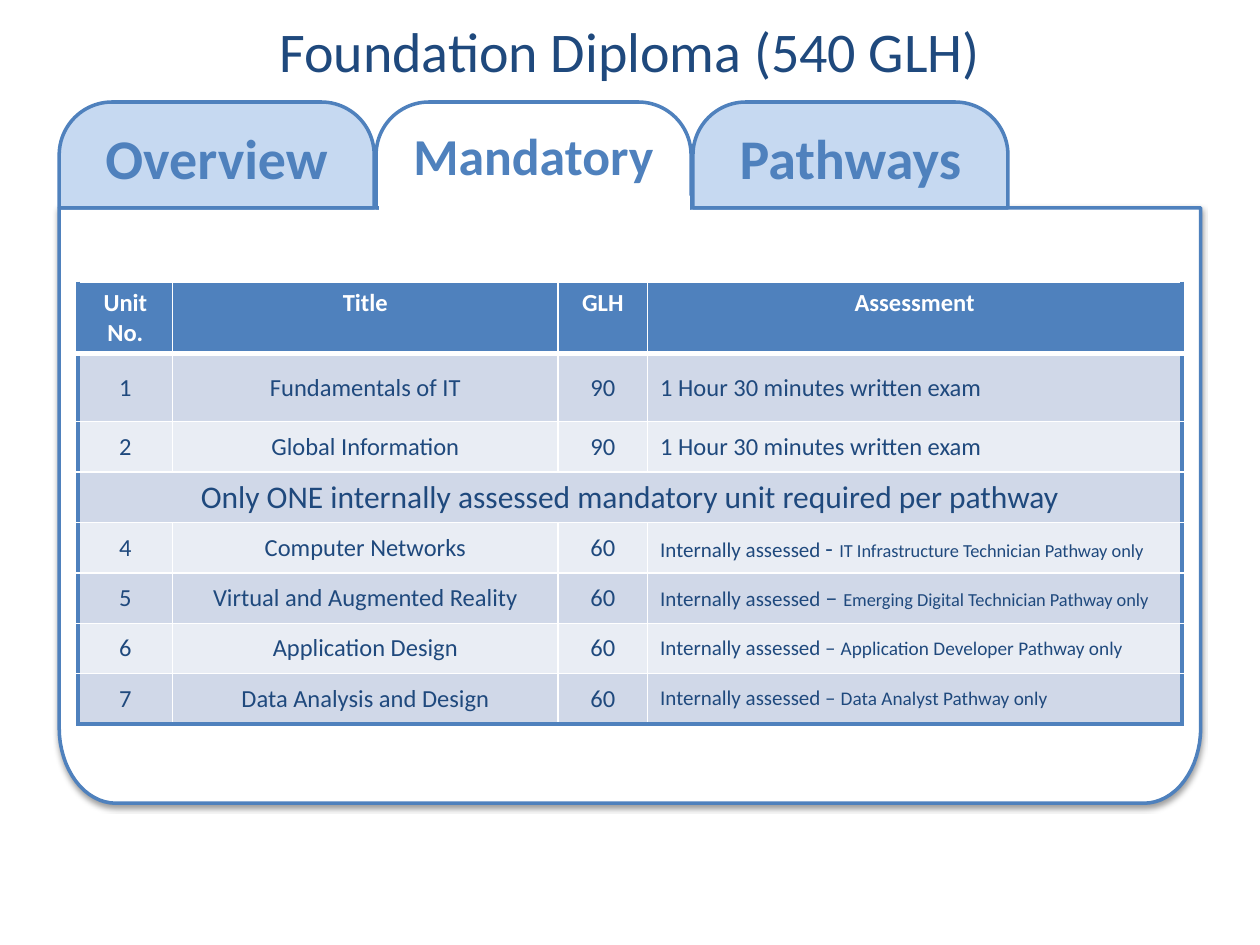
import math
import lxml.etree
import pptx
import pptx.util
import pptx.dml.color
import pptx.enum.shapes
import pptx.enum.text
import pptx.oxml.ns
from dataclasses import dataclass

Pt = pptx.util.Pt
Align = pptx.enum.text.PP_ALIGN
Anchor = pptx.enum.text.MSO_ANCHOR
Kind = pptx.enum.shapes.MSO_SHAPE
WIDE, HIGH = pptx.util.Inches(10), pptx.util.Inches(7.5)


@dataclass(frozen=True)
class Theme:
    face: str = "Calibri"
    dark: str = "1F497D"
    blue: str = "4F81BD"
    pale: str = "C6D9F1"
    white: str = "FFFFFF"
    bands: tuple = ("D0D8E8", "E9EDF4")
    head: float = 32
    front: float = 29.6
    note: float = 18
    body: float = 14
    small: float = 12
    line: float = 2
    edge: float = 2.25
    rule: float = 1
    thick: float = 3


T = Theme()


def across(share):
    return round(WIDE * share / 100)


def down(share):
    return round(HIGH * share / 100)


def area(left, top, wide, high):
    return across(left), down(top), across(wide), down(high)


def tint(name):
    return pptx.dml.color.RGBColor.from_string(name)


def paint(shape, fill, line):
    shape.shadow.inherit = False
    shape.fill.solid()
    shape.fill.fore_color.rgb = tint(fill)
    shape.line.color.rgb = tint(line)
    shape.line.width = Pt(T.line)


def write(frame, text, size, color, bold=False, align=Align.CENTER):
    para = frame.paragraphs[0]
    para.alignment = align
    para.font.name = T.face
    para.font.bold = bold
    para.font.color.rgb = tint(color)
    if isinstance(text, str):
        para.font.size = Pt(size)
        para.add_run().text = text
        return
    for part, points in text:
        run = para.add_run()
        run.text = part
        run.font.size = Pt(points)


def add_title(slide, text):
    box = slide.shapes.add_textbox(*area(0, 0, 100, 10.53))
    box.text_frame.word_wrap = True
    box.text_frame.vertical_anchor = Anchor.MIDDLE
    write(box.text_frame, text, T.head, T.dark)


def add_shade(shape):
    tag = pptx.oxml.ns.qn
    effect = shape._element.spPr.find(tag("a:effectLst"))
    shade = lxml.etree.SubElement(
        effect, tag("a:outerShdw"), blurRad=str(Pt(3.1)), dist=str(Pt(1.6)),
        dir="5400000", algn="t", rotWithShape="0")
    black = lxml.etree.SubElement(shade, tag("a:srgbClr"), val="000000")
    lxml.etree.SubElement(black, tag("a:alpha"), val="38000")


def add_panel(slide, left, top, right, foot):
    wide, high, steps = 4.5, 8, 16
    turn = [math.pi / 2 * step / steps for step in range(steps + 1)]
    curve = [(wide * (1 - math.cos(a)), high * (1 - math.sin(a))) for a in turn]
    points = [(right, top)]
    points += [(right - x, foot - y) for x, y in curve]
    points += [(left + x, foot - y) for x, y in reversed(curve)]
    path = slide.shapes.build_freeform(across(left), down(top))
    path.add_line_segments([(across(x), down(y)) for x, y in points])
    panel = path.convert_to_shape()
    paint(panel, T.white, T.blue)
    add_shade(panel)


def add_tab(slide, place, text, size, fill):
    tab = slide.shapes.add_shape(
        Kind.ROUND_2_SAME_RECTANGLE, *area(4.7 + 25.15 * place, 10.8, 25, 11.2))
    tab.adjustments[0], tab.adjustments[1] = 0.5, 0
    paint(tab, fill, T.blue)
    tab.text_frame.vertical_anchor = Anchor.TOP
    write(tab.text_frame, text, size, T.blue, True)


def add_cover(slide):
    cover = slide.shapes.add_shape(Kind.RECTANGLE, *area(30.2, 20.8, 24.4, 2.27))
    paint(cover, T.white, T.white)


def set_edges(cell, edges):
    tag = pptx.oxml.ns.qn
    props = cell._tc.get_or_add_tcPr()
    for place, (side, (color, width)) in enumerate(edges.items()):
        line = lxml.etree.Element(tag("a:ln" + side), w=str(Pt(width)))
        fill = lxml.etree.SubElement(line, tag("a:solidFill"))
        lxml.etree.SubElement(fill, tag("a:srgbClr"), val=color)
        props.insert(place, line)


def add_cell(grid, row, col, text):
    cell = grid.cell(row, col)
    top, last, end = row == 0, row == len(grid.rows) - 1, len(grid.columns) - 1
    cell.fill.solid()
    cell.fill.fore_color.rgb = tint(T.blue if top else T.bands[(row - 1) % 2])
    cell.vertical_anchor = Anchor.TOP if top else Anchor.MIDDLE
    plain, strong = (T.white, T.rule), (T.blue, T.edge)
    foot = (T.white, T.thick) if top else strong if last else plain
    set_edges(cell, {
        "L": plain if col else strong,
        "R": strong if col == end or cell.is_merge_origin else plain,
        "T": (T.white, T.thick) if row == 1 else plain,
        "B": foot})
    if text:
        size = T.note if cell.is_merge_origin else T.body
        align = Align.LEFT if col == end and not top else Align.CENTER
        write(cell.text_frame, text, size, T.white if top else T.dark, top, align)


def add_grid(slide, rows):
    cols = (7.5, 30.6, 7.1, 42.4)
    highs = [7.47, 7.2] + [5.33] * (len(rows) - 2)
    grid = slide.shapes.add_table(
        len(rows), len(cols), *area(6.2, 29.87, sum(cols), sum(highs))).table
    for col, share in zip(grid.columns, cols):
        col.width = across(share)
    for row, share in zip(grid.rows, highs):
        row.height = down(share)
    for r, row in enumerate(rows):
        if len(row) == 1:
            grid.cell(r, 0).merge(grid.cell(r, len(cols) - 1))
        for c in range(len(cols)):
            add_cell(grid, r, c, row[c] if c < len(row) else "")


def main():
    deck = pptx.Presentation()
    deck.slide_width, deck.slide_height = WIDE, HIGH
    slide = deck.slides.add_slide(deck.slide_layouts[6])
    exam = "1 Hour 30 minutes written exam"
    inner = "Internally assessed "
    rows = [
        ("Unit No.", "Title", "GLH", "Assessment"),
        ("1", "Fundamentals of IT", "90", exam),
        ("2", "Global Information", "90", exam),
        ("Only ONE internally assessed mandatory unit required per pathway",),
        ("4", "Computer Networks", "60",
         [(inner, T.small), ("-", T.body), (" ", 16),
          ("IT Infrastructure Technician Pathway only", 10.5)]),
        ("5", "Virtual and Augmented Reality", "60",
         [(inner, T.small), ("– ", T.body),
          ("Emerging Digital Technician Pathway only", 10.5)]),
        ("6", "Application Design", "60",
         [(inner + "– ", T.small), ("Application Developer Pathway only", 11)]),
        ("7", "Data Analysis and Design", "60",
         [(inner + "– ", T.small), ("Data Analyst Pathway only", 11)]),
    ]
    add_title(slide, "Foundation Diploma (540 GLH)")
    add_panel(slide, 4.7, 22, 95.3, 85)
    add_tab(slide, 2, "Pathways", T.head, T.pale)
    add_tab(slide, 1, "Mandatory", T.front, T.white)
    add_tab(slide, 0, "Overview", T.head, T.pale)
    add_cover(slide)
    add_grid(slide, rows)
    deck.save("out.pptx")


if __name__ == "__main__":
    main()
